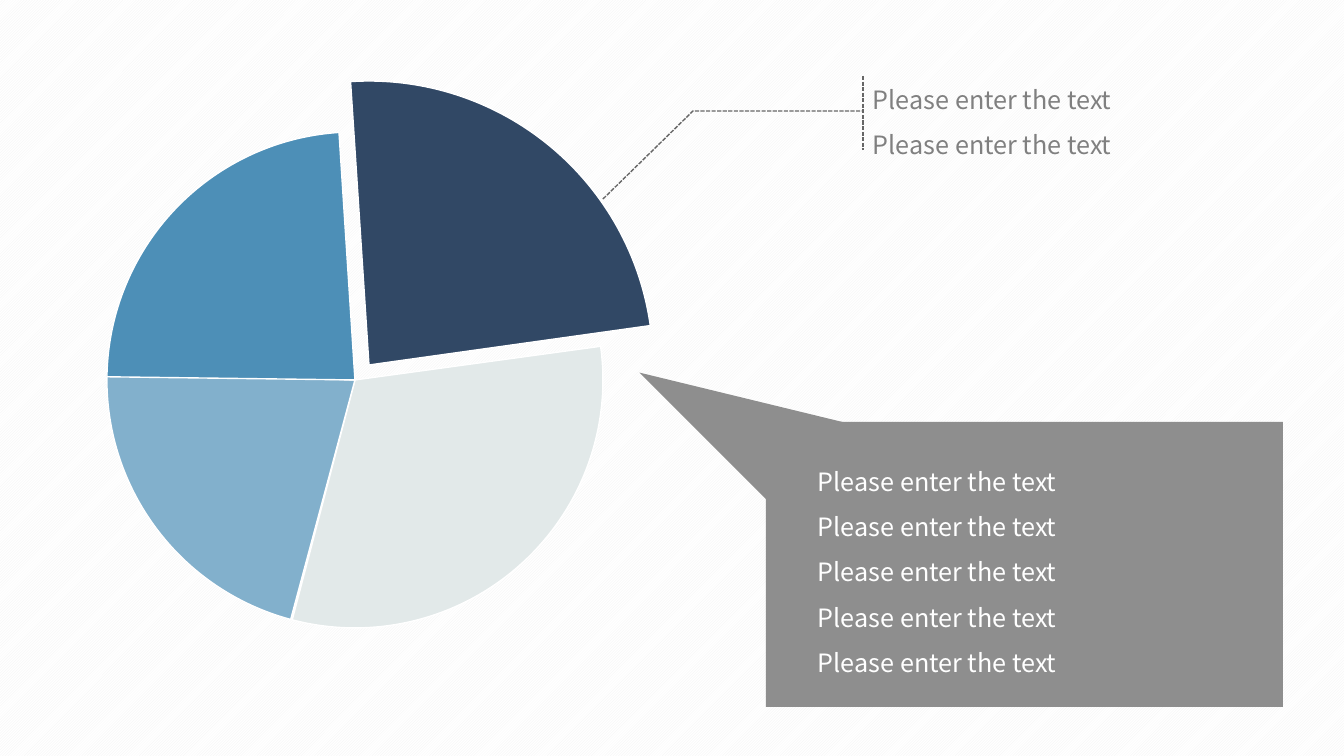
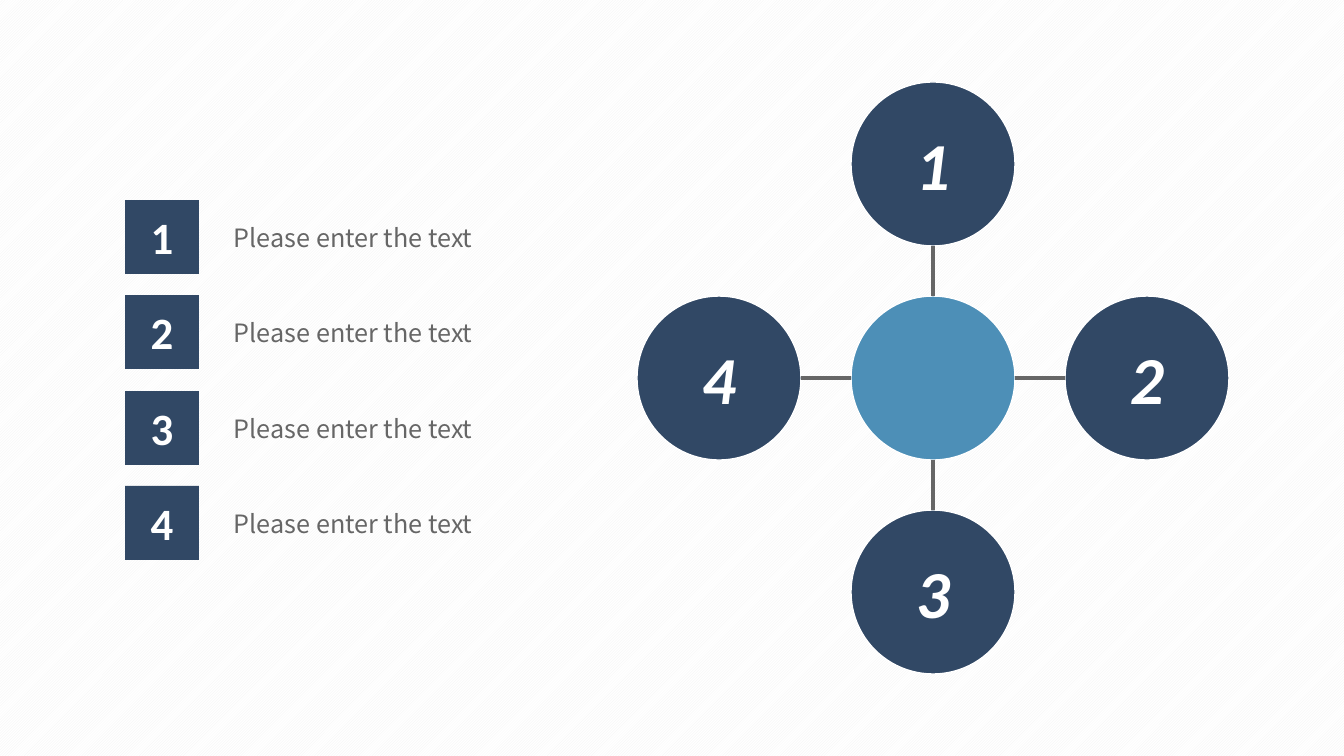
import pptx
import pptx.util
import pptx.dml.color
import pptx.enum.dml
import pptx.enum.shapes
import pptx.enum.text
import lxml.etree

PX = 914400 / 100.8
COLORS = {
    "navy": "314865", "blue": "4D8FB7", "sky": "82B0CC", "mist": "E2E9E9",
    "panel": "8E8E8E", "line": "666666", "gray": "808080", "white": "FFFFFF",
    "stripe": "F2F2F2",
}
RGB = {k: pptx.dml.color.RGBColor.from_string(v) for k, v in COLORS.items()}
SHAPE = pptx.enum.shapes.MSO_SHAPE
DASH = pptx.enum.dml.MSO_LINE.SQUARE_DOT
ALIGN = pptx.enum.text.PP_ALIGN
PROMPT = "Please enter the text"


def add_shape(s, kind, x, y, w, h, fill, line=None):
    sp = s.shapes.add_shape(kind, *[round(v * PX) for v in (x, y, w, h)])
    sp.shadow.inherit = False
    sp.fill.solid()
    sp.fill.fore_color.rgb = RGB[fill]
    if line:
        sp.line.color.rgb = RGB[line]
        sp.line.width = pptx.util.Pt(1)
    else:
        sp.line.fill.background()
    return sp


def write(target, text, box=None, size=18, font="Noto Sans CJK SC", color="white",
          bold=False, italic=False, align=ALIGN.LEFT, spacing=None):
    sp = target
    if box:
        sp = target.shapes.add_textbox(*[round(v * PX) for v in box])
    tf = sp.text_frame
    tf.word_wrap = True
    tf.text = text
    for p in tf.paragraphs:
        p.alignment = align
        p.line_spacing = spacing
        f = p.runs[0].font
        f.name, f.size = font, pptx.util.Pt(size)
        f.bold, f.italic = bold, italic
        f.color.rgb = RGB[color]


prs = pptx.Presentation()
prs.slide_width = round(1344 * PX)
prs.slide_height = round(756 * PX)
bg = prs.slide_master.background.fill
bg.patterned()
bg.pattern = pptx.enum.dml.MSO_PATTERN.DARK_UPWARD_DIAGONAL
bg.fore_color.rgb = RGB["stripe"]
bg.back_color.rgb = RGB["white"]
blank = prs.slide_layouts[6]
pie_slide = prs.slides.add_slide(blank)
hub_slide = prs.slides.add_slide(blank)

s = pie_slide
slices = [
    (85, 81, 568, 266.28, 352.02, "navy"),
    (107, 132, 496, 352.21, 104.64, "mist"),
    (107, 132, 496, 105.01, 181.42, "sky"),
    (107, 132, 496, 180.73, 266.32, "blue"),
]
for x, y, size, start, end, fill in slices:
    sp = add_shape(s, SHAPE.PIE, x, y, size, size, fill, "white")
    sp.adjustments[0] = start * 0.6
    sp.adjustments[1] = end * 0.6

fb = s.shapes.build_freeform(603, 199, scale=PX)
fb.add_line_segments([(693, 111), (863, 111)], close=False)
leader = fb.convert_to_shape()
leader.shadow.inherit = False
leader.fill.background()
leader.line.color.rgb = RGB["line"]
leader.line.width = pptx.util.Pt(1)
leader.line.dash_style = DASH
links = [(s, 863, 76, 863, 150, 1, DASH)]
write(s, "\n".join([PROMPT] * 2), box=(863, 64, 341, 97), color="gray", spacing=1.5)

add_shape(s, SHAPE.RECTANGLE, 766, 422, 517, 285, "panel")
pointer = add_shape(s, SHAPE.ISOSCELES_TRIANGLE, 688, 306, 112, 184, "panel")
pointer.adjustments[0] = 0
pointer.rotation = 315
write(s, "\n".join([PROMPT] * 5), box=(808, 446, 341, 239), spacing=1.5)

s = hub_slide
cx, cy, radius, pitch = 933, 378, 82, 214
add_shape(s, SHAPE.OVAL, cx - radius, cy - radius, 2 * radius, 2 * radius, "blue", "white")
directions = [(0, -1), (1, 0), (0, 1), (-1, 0)]
for i, (dx, dy) in enumerate(directions):
    number = str(i + 1)
    x, y = cx + dx * pitch, cy + dy * pitch
    sp = add_shape(s, SHAPE.OVAL, x - radius, y - radius, 2 * radius, 2 * radius, "navy", "white")
    write(sp, number, size=48, font="Calibri", bold=True, italic=True, align=ALIGN.CENTER)
    inner, outer = radius, pitch - radius
    links.append((s, cx + dx * inner, cy + dy * inner,
                  cx + dx * outer, cy + dy * outer, 2.25, None))

    top = 200 + i * 191 // 2
    sp = add_shape(s, SHAPE.RECTANGLE, 125, top, 74, 74, "navy")
    write(sp, number, size=32, font="Calibri", bold=True, align=ALIGN.CENTER)
    write(s, PROMPT, box=(224, top + 17, 278, 40), color="line")

for s, x1, y1, x2, y2, width, dash in links:
    ends = [round(v * PX) for v in (x1, y1, x2, y2)]
    cn = s.shapes.add_connector(pptx.enum.shapes.MSO_CONNECTOR.STRAIGHT, *ends)
    cn.line.color.rgb = RGB["line"]
    cn.line.width = pptx.util.Pt(width)
    cn.line.dash_style = dash
    lxml.etree.SubElement(cn._element.spPr, pptx.oxml.ns.qn("a:effectLst"))

prs.save("out.pptx")
